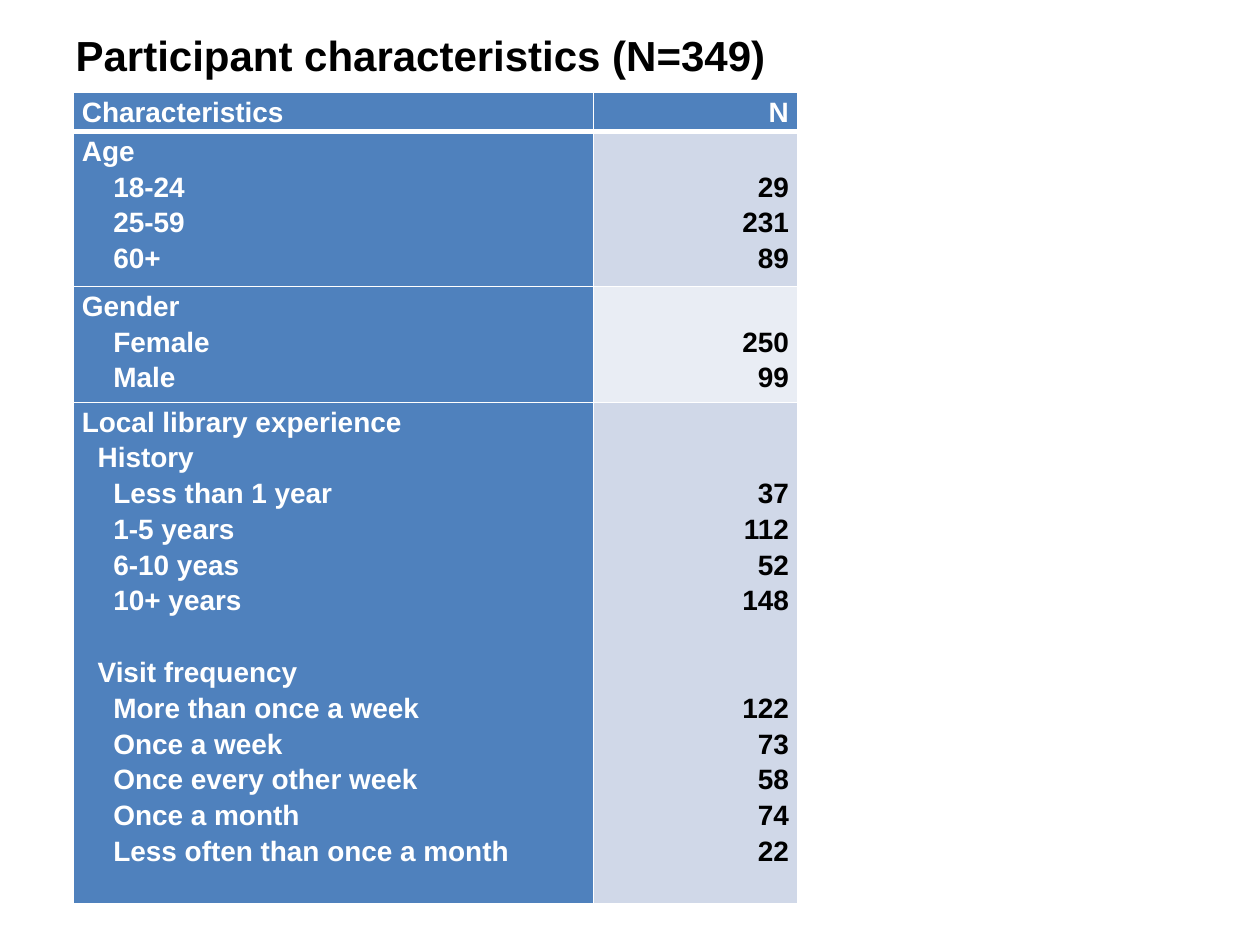
from typing import NamedTuple, Optional

from lxml.etree import SubElement
from pptx import Presentation
from pptx.dml.color import RGBColor
from pptx.enum.text import MSO_ANCHOR as Anchor, MSO_AUTO_SIZE as AutoSize, PP_ALIGN as Align
from pptx.oxml.ns import qn
from pptx.util import Pt

COLORS = {
    "white": "FFFFFF",
    "black": "000000",
    "blue": "4F81BD",
    "band": "D0D8E8",
    "light_band": "E9EDF4",
}
FONT = "Arial"
TEXT_SIZE = 16
LINE_SPACING = 1.15
LINE_PITCH = 20.45  # height of one table line
INDENT = 9
COLUMN_WIDTHS = (297.4, 116.6)


class Line(NamedTuple):
    label: Optional[str] = None
    value: Optional[str] = None
    level: int = 0


class Group(NamedTuple):
    height: float
    band: str
    lines: list[Line]


def items(*pairs: tuple[str, str]) -> list[Line]:
    return [Line(label, value, 2) for label, value in pairs]


GROUPS = [
    Group(22.3, "blue", [Line("Characteristics", "N")]),
    Group(88.6, "band", [
        Line("Age"),
        *items(("18-24", "29"), ("25-59", "231"), ("60+", "89")),
    ]),
    Group(66.2, "light_band", [
        Line("Gender"),
        *items(("Female", "250"), ("Male", "99")),
    ]),
    Group(286.6, "band", [
        Line("Local library experience"),
        Line("History", level=1),
        *items(("Less than 1 year", "37"), ("1-5 years", "112"),
               ("6-10 yeas", "52"), ("10+ years", "148")),
        Line(),
        Line("Visit frequency", level=1),
        *items(("More than once a week", "122"), ("Once a week", "73"),
               ("Once every other week", "58"), ("Once a month", "74"),
               ("Less often than once a month", "22")),
    ]),
]


def rgb(color: str) -> RGBColor:
    return RGBColor.from_string(COLORS[color])


def format_runs(paragraph, size: float, color: str) -> None:
    for run in paragraph.runs:
        run.font.name = FONT
        run.font.size = Pt(size)
        run.font.bold = True
        run.font.color.rgb = rgb(color)


def set_borders(cell, top: float, bottom: float) -> None:
    properties = cell._tc.get_or_add_tcPr()
    widths = {"a:lnL": 1, "a:lnR": 1, "a:lnT": top, "a:lnB": bottom}
    for index, (side, width) in enumerate(widths.items()):
        border = SubElement(properties, qn(side), w=str(Pt(width)))
        fill = SubElement(border, qn("a:solidFill"))
        SubElement(fill, qn("a:srgbClr"), val=COLORS["white"])
        properties.insert(index, border)


def fill_cell(cell, entries: list[tuple[Optional[str], int]],
              fill: str, color: str, align: Align) -> None:
    """Write the entries one per line; a None entry leaves its line open."""
    cell.fill.solid()
    cell.fill.fore_color.rgb = rgb(fill)
    cell.vertical_anchor = Anchor.TOP
    cell.margin_left = cell.margin_right = Pt(5)
    cell.margin_top = cell.margin_bottom = Pt(0)

    paragraph, skipped = None, 0
    for text, level in entries:
        if text is None:
            skipped += 1
            continue
        gap = Pt(skipped * LINE_PITCH)
        if paragraph is None:
            paragraph = cell.text_frame.paragraphs[0]
            cell.margin_top = gap
        else:
            paragraph = cell.text_frame.add_paragraph()
            paragraph.space_before = gap
        paragraph.text = text
        paragraph.alignment = align
        paragraph.line_spacing = LINE_SPACING
        if level:
            properties = paragraph._p.get_or_add_pPr()
            properties.set("marL", str(Pt(level * INDENT)))
            properties.set("indent", "0")
        format_runs(paragraph, TEXT_SIZE, color)
        skipped = 0


def add_title(slide, text: str) -> None:
    title = slide.shapes.title
    title.left, title.top, title.width, title.height = Pt(36), Pt(13), Pt(498), Pt(36)
    frame = title.text_frame
    frame.text = text
    frame.word_wrap = True
    frame.auto_size = AutoSize.NONE
    frame.vertical_anchor = Anchor.MIDDLE
    frame.paragraphs[0].alignment = Align.LEFT
    format_runs(frame.paragraphs[0], 24, "black")


def add_characteristics(slide, groups: list[Group]) -> None:
    table = slide.shapes.add_table(
        len(groups), len(COLUMN_WIDTHS), Pt(41.8), Pt(52.8),
        Pt(sum(COLUMN_WIDTHS)), Pt(sum(group.height for group in groups))).table
    for column, width in zip(table.columns, COLUMN_WIDTHS):
        column.width = Pt(width)

    for index, group in enumerate(groups):
        table.rows[index].height = Pt(group.height)
        label_cell, value_cell = table.cell(index, 0), table.cell(index, 1)
        fill_cell(label_cell, [(line.label, line.level) for line in group.lines],
                  "blue", "white", Align.LEFT)
        fill_cell(value_cell, [(line.value, 0) for line in group.lines],
                  group.band, "black" if index else "white", Align.RIGHT)
        # The rule under the header is thicker
        for cell in (label_cell, value_cell):
            set_borders(cell, top=3 if index == 1 else 1, bottom=1 if index else 3)


def main() -> None:
    presentation = Presentation()
    presentation.slide_width, presentation.slide_height = Pt(720), Pt(540)
    slide = presentation.slides.add_slide(presentation.slide_layouts[5])
    add_title(slide, "Participant characteristics (N=349)")
    add_characteristics(slide, GROUPS)
    presentation.save("out.pptx")


if __name__ == "__main__":
    main()
